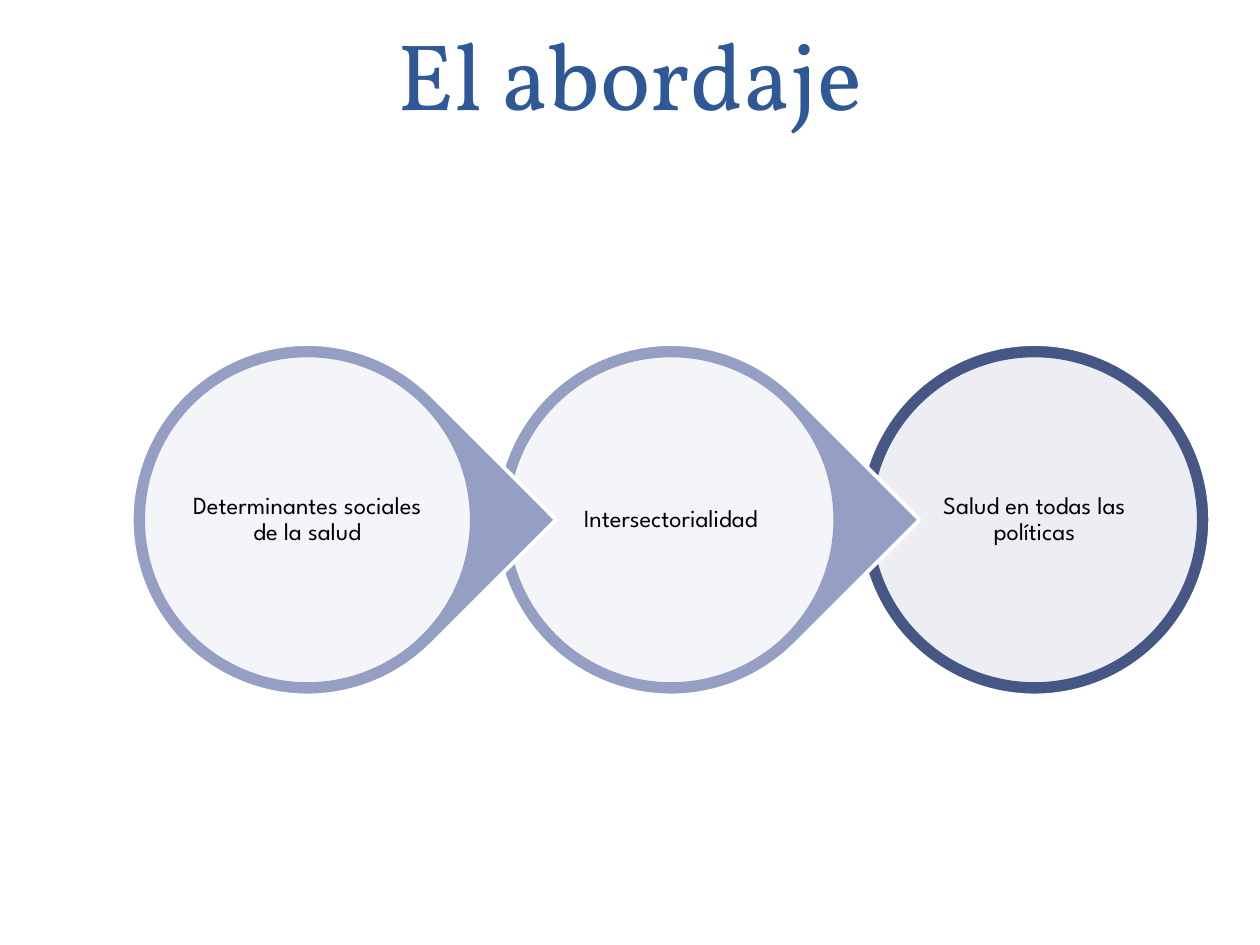
from pptx import Presentation
from pptx.dml.color import RGBColor as Rgb
from pptx.enum.shapes import MSO_SHAPE as Kind
from pptx.enum.text import MSO_ANCHOR as Anchor, PP_ALIGN as Align
from pptx.oxml.ns import qn
from pptx.util import Inches, Pt
from lxml.etree import SubElement as Sub

theme = {
    "title": ("Vollkorn", 54, "2F5897"),
    "body": ("League Spartan", 14, "000000"),
    "white": "FFFFFF",
    "light": "949FC3",
    "dark": "475785",
    "line": 2.25,
}


def write(frame, text, style, anchor, space):
    font, size, color = theme[style]
    frame.word_wrap = True
    frame.vertical_anchor = anchor
    para = frame.paragraphs[0]
    para.alignment = Align.CENTER
    para.line_spacing = space
    run = para.add_run()
    run.text = text
    run.font.name = font
    run.font.size = Pt(size)
    run.font.color.rgb = Rgb.from_string(color)


def disc(kind, mid, size, fill, line):
    shape = slide.shapes.add_shape(kind, mid - size // 2, axis - size // 2, size, size)
    shape.shadow.inherit = False
    shape.fill.solid()
    shape.fill.fore_color.rgb = Rgb.from_string(fill)
    shape.line.color.rgb = Rgb.from_string(line)
    shape.line.width = Pt(theme["line"])
    return shape


deck = Presentation()
deck.slide_width, deck.slide_height = Inches(10), Inches(7.5)
slide = deck.slides.add_slide(deck.slide_layouts[5])

title = slide.shapes.title
title.left, title.top = Inches(0.5), Inches(0.08)
title.width, title.height = Inches(9), Inches(1)
write(title.text_frame, "El abordaje", "title", Anchor.BOTTOM, Pt(58))

steps = [
    ("Determinantes sociales de la salud", Kind.TEAR, "light"),
    ("Intersectorialidad", Kind.TEAR, "light"),
    ("Salud en todas las políticas", Kind.OVAL, "dark"),
]
outer = Inches(2.79)
inner = Inches(2.61)
label = outer * 2 // 3
first, last = Inches(2.44), Inches(8.21)
pitch = (last - first) // (len(steps) - 1)
axis = deck.slide_height * 55 // 100

for col, (text, kind, tone) in reversed(list(enumerate(steps))):
    mid = first + col * pitch
    ring = disc(kind, mid, outer, theme[tone], theme["white"])
    if kind == Kind.TEAR:
        ring.adjustments[0] = 1
        ring.rotation = 45

    core = disc(Kind.OVAL, mid, inner, theme["white"], theme[tone])
    tint = core.fill._xPr.find(qn("a:solidFill"))[0]
    Sub(tint, qn("a:alpha"), val="90000")

    box = slide.shapes.add_textbox(mid - label // 2, axis - label // 2, label, label)
    frame = box.text_frame
    frame.margin_left = frame.margin_right = Inches(0.02)
    frame.margin_top = frame.margin_bottom = Inches(0.02)
    write(frame, text, "body", Anchor.MIDDLE, 0.9)

deck.save("out.pptx")
